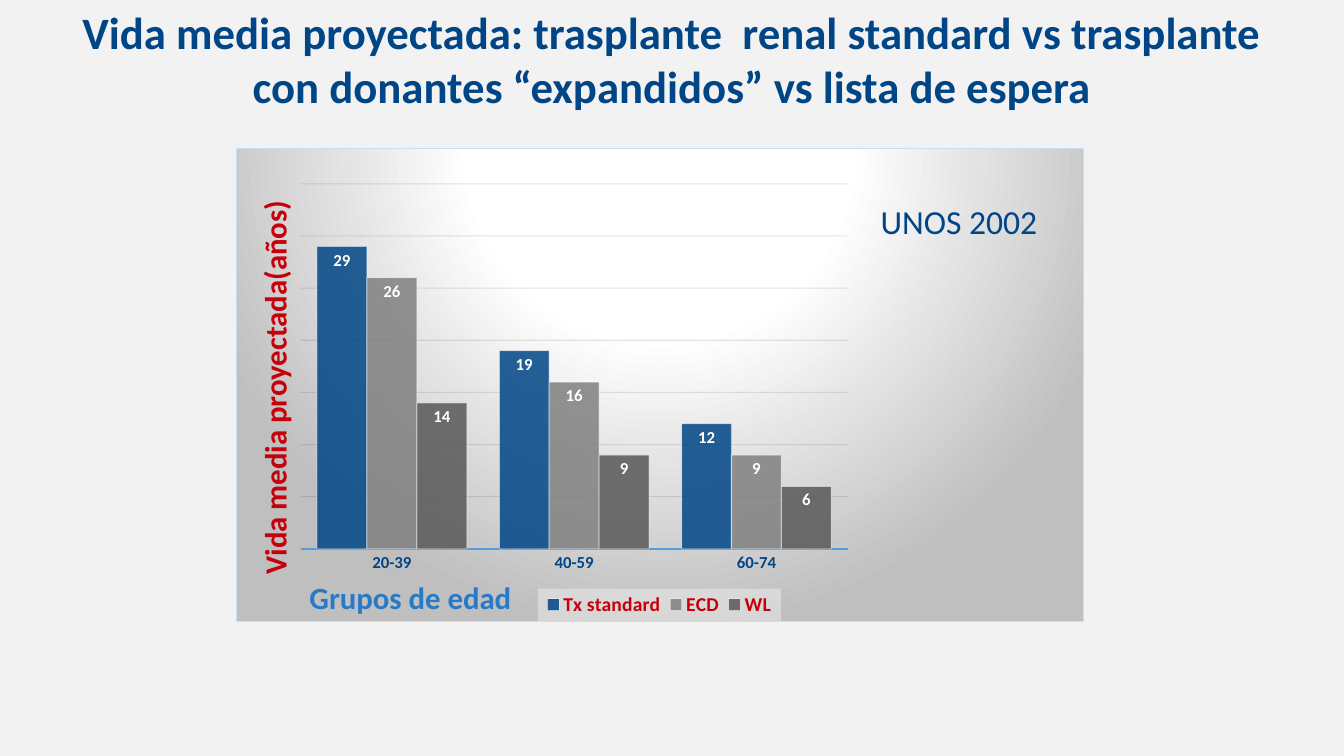
from pptx import Presentation
from pptx.chart.data import CategoryChartData
from pptx.dml.color import RGBColor
from pptx.enum.chart import (XL_CHART_TYPE, XL_LABEL_POSITION,
                             XL_LEGEND_POSITION, XL_TICK_MARK)
from pptx.enum.text import MSO_ANCHOR, MSO_AUTO_SIZE, PP_ALIGN
from pptx.oxml import parse_xml
from pptx.oxml.ns import nsdecls
from pptx.util import Pt

COLUMNS = XL_CHART_TYPE.COLUMN_CLUSTERED
INSIDE_END = XL_LABEL_POSITION.INSIDE_END
LEGEND_BOTTOM = XL_LEGEND_POSITION.BOTTOM
NO_TICK = XL_TICK_MARK.NONE
MIDDLE = MSO_ANCHOR.MIDDLE
TOP = MSO_ANCHOR.TOP
FIT_SHAPE = MSO_AUTO_SIZE.SHAPE_TO_FIT_TEXT
NO_FIT = MSO_AUTO_SIZE.NONE
LEFT = PP_ALIGN.LEFT
CENTER = PP_ALIGN.CENTER

FONT = "Calibri"
NAVY = RGBColor(0x00, 0x45, 0x86)
BLUE = RGBColor(0x28, 0x7A, 0xC8)
AXIS_BLUE = RGBColor(0x56, 0x9B, 0xDD)
RED = RGBColor(0xC5, 0x00, 0x0B)
GRAY = RGBColor(0x80, 0x80, 0x80)
DARK_GRAY = RGBColor(0x58, 0x58, 0x58)
BLACK = RGBColor(0x00, 0x00, 0x00)
WHITE = RGBColor(0xFF, 0xFF, 0xFF)
PAPER = RGBColor(0xF2, 0xF2, 0xF2)
SILVER = RGBColor(0xBF, 0xBF, 0xBF)
BORDER = RGBColor(0xC7, 0xDE, 0xF4)

AGE_GROUPS = ["20-39", "40-59", "60-74"]
SERIES = [
    ("Tx standard", (29, 19, 12), NAVY),
    ("ECD", (26, 16, 9), GRAY),
    ("WL", (14, 9, 6), DARK_GRAY),
]


def set_font(font, size, color, bold=False):
    """Apply the common typeface with a size, colour and weight."""
    font.name = FONT
    font.size = Pt(size)
    font.bold = bold
    font.color.rgb = color


def add_text(s, text, box, size=22, color=NAVY, bold=False, align=LEFT,
             anchor=TOP, wrap=False, rotation=0, spacing=1.0):
    """Add a one-paragraph text box."""
    sp = s.shapes.add_textbox(*(Pt(v) for v in box))
    sp.rotation = rotation
    tf = sp.text_frame
    tf.word_wrap = wrap
    tf.auto_size = NO_FIT if wrap else FIT_SHAPE
    tf.vertical_anchor = anchor
    p = tf.paragraphs[0]
    p.alignment = align
    p.line_spacing = spacing
    r = p.add_run()
    r.text = text
    set_font(r.font, size, color, bold)


def set_alpha(fill, percent):
    """Make a solid fill partly transparent."""
    alpha = parse_xml(f'<a:alpha {nsdecls("a")} val="{percent * 1000}"/>')
    fill._xPr.xpath("./a:solidFill/a:srgbClr")[0].append(alpha)


def make_layout(x, y, w, h, target=""):
    """Return a manual layout given as fractions of the chart."""
    return parse_xml(
        f'<c:layout {nsdecls("c")}><c:manualLayout>{target}'
        '<c:xMode val="edge"/><c:yMode val="edge"/>'
        f'<c:x val="{x}"/><c:y val="{y}"/><c:w val="{w}"/><c:h val="{h}"/>'
        '</c:manualLayout></c:layout>')


def style_chart_area(chart):
    """Give the chart its radial background, border and plot position."""
    root = chart.element
    stops = "".join(
        f'<a:gs pos="{pos * 1000}"><a:srgbClr val="{color}"/></a:gs>'
        for pos, color in ((0, WHITE), (39, WHITE), (100, SILVER)))
    area = parse_xml(
        f'<c:spPr {nsdecls("c", "a")}><a:gradFill><a:gsLst>{stops}</a:gsLst>'
        '<a:path path="circle"><a:fillToRect l="50000" t="-80000" r="50000" '
        'b="180000"/></a:path></a:gradFill>'
        f'<a:ln w="{Pt(0.75)}"><a:solidFill><a:srgbClr val="{BORDER}"/>'
        '</a:solidFill></a:ln></c:spPr>')
    root.xpath("./c:chart")[0].addnext(area)
    plot_area = root.xpath("./c:chart/c:plotArea")[0]
    for old in plot_area.xpath("./c:layout"):
        plot_area.remove(old)
    inner = '<c:layoutTarget val="inner"/>'
    plot_area.insert(0, make_layout(0.076, 0.074, 0.646, 0.772, inner))


def style_legend(chart):
    """Place the legend at the bottom on a pale translucent panel."""
    chart.has_legend = True
    chart.legend.position = LEGEND_BOTTOM
    chart.legend.include_in_layout = False
    set_font(chart.legend.font, 14, RED, True)
    legend = chart.element.xpath("./c:chart/c:legend")[0]
    for old in legend.xpath("./c:layout"):
        legend.remove(old)
    legend.xpath("./c:legendPos")[0].addnext(
        make_layout(0.356, 0.93, 0.287, 0.068))
    legend.xpath("./c:txPr")[0].addprevious(parse_xml(
        f'<c:spPr {nsdecls("c", "a")}><a:solidFill><a:srgbClr val="{PAPER}">'
        '<a:alpha val="45000"/></a:srgbClr></a:solidFill></c:spPr>'))


def style_axes(chart):
    """Format the age axis, the hidden value axis and its gridlines."""
    ages = chart.category_axis
    ages.major_tick_mark = NO_TICK
    ages.minor_tick_mark = NO_TICK
    ages.format.line.color.rgb = AXIS_BLUE
    ages.format.line.width = Pt(1.5)
    set_font(ages.tick_labels.font, 12, NAVY, True)
    years = chart.value_axis
    years.minimum_scale = 0
    years.maximum_scale = 35
    years.major_unit = 5
    years.visible = False
    years.has_major_gridlines = True
    grid = years.major_gridlines.format.line
    grid.width = Pt(0.75)
    grid.color.rgb = BLACK
    set_alpha(grid.fill, 10)


def add_survival_chart(s, box):
    """Add the projected survival columns by age group."""
    data = CategoryChartData()
    data.categories = AGE_GROUPS
    for name, values, _ in SERIES:
        data.add_series(name, values)
    chart = s.shapes.add_chart(COLUMNS, *(Pt(v) for v in box), data).chart
    chart.has_title = False
    set_font(chart.font, 10, BLUE)
    style_chart_area(chart)
    style_legend(chart)
    style_axes(chart)
    plot = chart.plots[0]
    plot.gap_width = 65
    plot.overlap = 0
    plot.vary_by_categories = False
    for series, (_, _, color) in zip(plot.series, SERIES):
        fill = series.format.fill
        fill.solid()
        fill.fore_color.rgb = color
        set_alpha(fill, 85)
        line = series.format.line
        line.width = Pt(0.75)
        line.color.rgb = WHITE
        set_alpha(line.fill, 50)
        labels = series.data_labels
        labels.show_value = True
        labels.position = INSIDE_END
        set_font(labels.font, 12, WHITE, True)


def add_chart_panel(s, x, y, w, h):
    """Add the chart with its axis captions and source note."""
    add_survival_chart(s, (x, y, w, h))
    add_text(s, "Vida media proyectada(años)", (x - 114.5, y + 154, 284.5, 34),
             color=RED, bold=True, align=CENTER, rotation=270)
    add_text(s, "Grupos de edad", (x + 45.5, y + 306.5, 160.5, 31),
             color=BLUE, bold=True, spacing=0.9)
    add_text(s, "UNOS 2002", (x + 453.5, y + 34, 127.5, 36), size=24)


def add_title(s, x, y, w, h):
    """Add the centred slide title."""
    add_text(s, "Vida media proyectada: trasplante  renal standard vs "
             "trasplante con donantes “expandidos” vs lista de espera",
             (x, y, w, h), size=32, bold=True, align=CENTER, anchor=MIDDLE,
             wrap=True)


def main():
    """Build and save the slide."""
    prs = Presentation()
    prs.slide_width = Pt(960)
    prs.slide_height = Pt(540)
    s = prs.slides.add_slide(prs.slide_layouts[6])
    s.background.fill.solid()
    s.background.fill.fore_color.rgb = PAPER
    add_title(s, 48, 18, 864, 47.5)
    add_chart_panel(s, 168.5, 106, 605.5, 338.5)
    prs.save("out.pptx")


if __name__ == "__main__":
    main()
